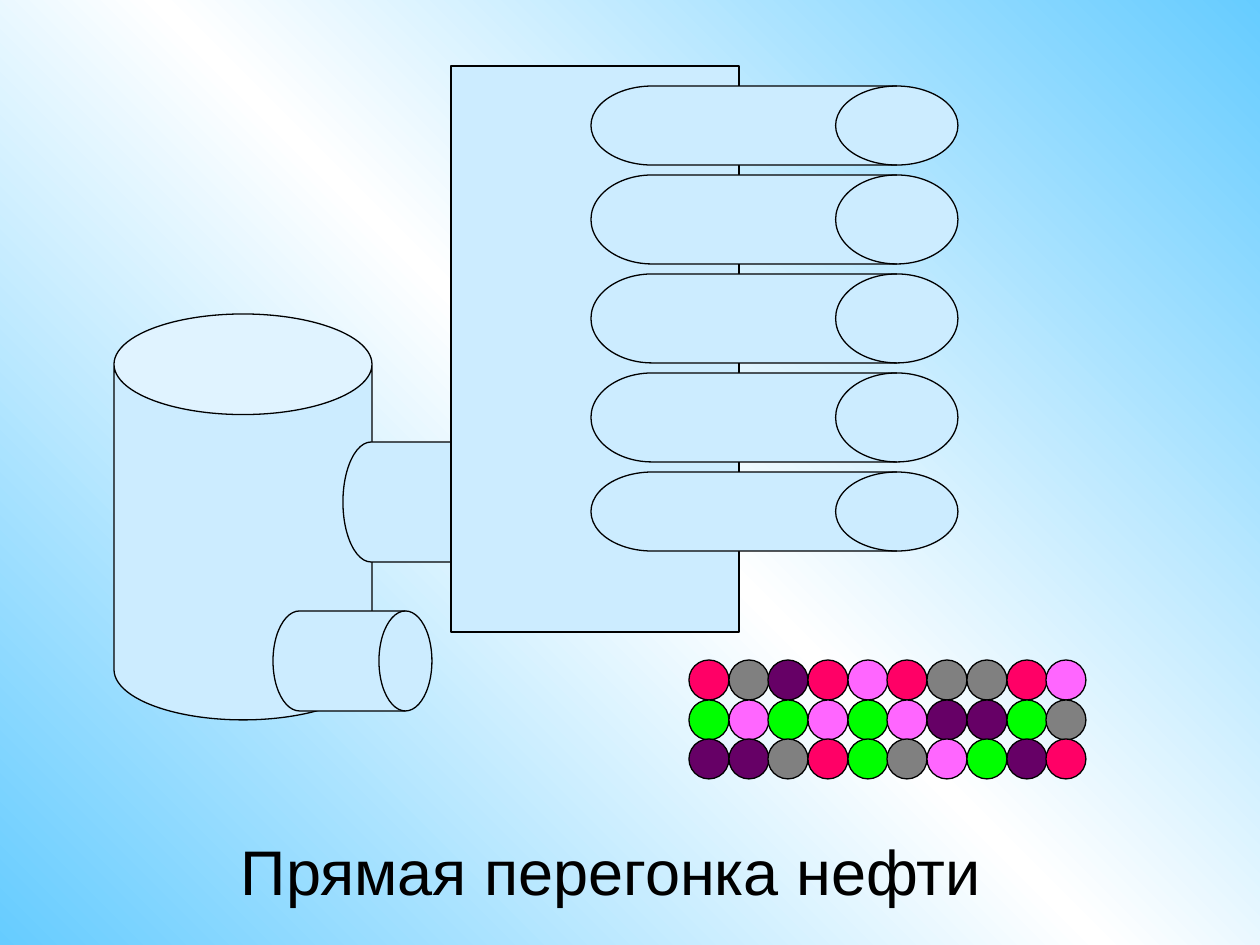
import copy
from dataclasses import dataclass

import pptx
import pptx.dml.color
import pptx.enum.shapes
import pptx.enum.text
import pptx.oxml.ns
import pptx.util

PX_PER_INCH = 126
SHAPE = pptx.enum.shapes.MSO_SHAPE


@dataclass(frozen=True)
class Theme:
    font: str = "Arial"
    title_size: int = 36
    line_width: float = 0.75
    ink: str = "000000"
    vessel: str = "CCECFF"
    sky: str = "66CCFF"
    white: str = "FFFFFF"
    red: str = "FF0066"
    gray: str = "808080"
    purple: str = "660066"
    pink: str = "FF66FF"
    green: str = "00FF00"


@dataclass(frozen=True)
class Area:
    left: int
    top: int
    width: int
    height: int


THEME = Theme()

TITLE = Area(44, 820, 1134, 100)
TANK = Area(114, 314, 258, 406)
TANK_OUTLET = Area(273, 611, 159, 100)
FEED_PIPE = Area(343, 442, 169, 120)
COLUMN = Area(451, 66, 288, 566)

PIPE_LEFT, PIPE_TOP, PIPE_WIDTH, PIPE_GAP = 591, 86, 367, 10
PIPE_HEIGHTS = (79, 89, 89, 89, 79)

MOLECULE_LEFT, MOLECULE_TOP, MOLECULE_SPAN = 689, 660, 397
MOLECULE_ROWS = (
    "red gray purple red pink red gray gray red pink".split(),
    "green pink green pink green pink purple purple green gray".split(),
    "purple purple gray red green gray pink green purple red".split(),
)


def px(length: int) -> pptx.util.Emu:
    return pptx.util.Emu(round(length * 914400 / PX_PER_INCH))


def rgb(color: str) -> pptx.dml.color.RGBColor:
    return pptx.dml.color.RGBColor.from_string(color)


def add_figure(page, kind, area: Area, fill: str = THEME.vessel):
    shape = page.shapes.add_shape(
        kind, px(area.left), px(area.top), px(area.width), px(area.height))
    shape.shadow.inherit = False
    shape.fill.solid()
    shape.fill.fore_color.rgb = rgb(fill)
    shape.line.color.rgb = rgb(THEME.ink)
    shape.line.width = pptx.util.Pt(THEME.line_width)
    return shape


def paint_background(page) -> None:
    """Fill the page with a diagonal gradient whose middle stop is white."""
    fill = page.background.fill
    fill.gradient()
    fill.gradient_angle = 45
    stop_list = page.element.find(".//" + pptx.oxml.ns.qn("a:gsLst"))
    stop_list.insert(1, copy.deepcopy(stop_list[0]))
    colors = (THEME.sky, THEME.white, THEME.sky)
    for stop, color, position in zip(fill.gradient_stops, colors, (0, 0.5, 1)):
        stop.color.rgb = rgb(color)
        stop.position = position


def write_title(page, text: str, *, size: int, color: str) -> None:
    title = page.shapes.title
    title.left, title.top = px(TITLE.left), px(TITLE.top)
    title.width, title.height = px(TITLE.width), px(TITLE.height)
    frame = title.text_frame
    frame.vertical_anchor = pptx.enum.text.MSO_ANCHOR.MIDDLE
    para = frame.paragraphs[0]
    para.alignment = pptx.enum.text.PP_ALIGN.CENTER
    span = para.add_run()
    span.text = text
    span.font.name = THEME.font
    span.font.size = pptx.util.Pt(size)
    span.font.color.rgb = rgb(color)


def draw_apparatus(page) -> None:
    tank = add_figure(page, SHAPE.CAN, TANK)
    tank.adjustments[0] = 0.39
    drum = SHAPE.FLOWCHART_DIRECT_ACCESS_STORAGE
    add_figure(page, drum, TANK_OUTLET)
    add_figure(page, drum, FEED_PIPE)
    add_figure(page, SHAPE.RECTANGLE, COLUMN)
    top = PIPE_TOP
    for height in PIPE_HEIGHTS:
        add_figure(page, drum, Area(PIPE_LEFT, top, PIPE_WIDTH, height))
        top += height + PIPE_GAP


def draw_molecules(page) -> None:
    for row, names in enumerate(MOLECULE_ROWS):
        pitch = MOLECULE_SPAN / len(names)
        for column, name in enumerate(names):
            area = Area(MOLECULE_LEFT + round(column * pitch),
                        MOLECULE_TOP + round(row * pitch),
                        round(pitch), round(pitch))
            add_figure(page, SHAPE.OVAL, area, getattr(THEME, name))


def main() -> None:
    deck = pptx.Presentation()
    deck.slide_width, deck.slide_height = px(1260), px(945)
    page = deck.slides.add_slide(deck.slide_layouts.get_by_name("Title Only"))
    paint_background(page)
    write_title(page, "Прямая перегонка нефти",
                size=THEME.title_size, color=THEME.ink)
    draw_apparatus(page)
    draw_molecules(page)
    deck.save("out.pptx")


if __name__ == "__main__":
    main()
